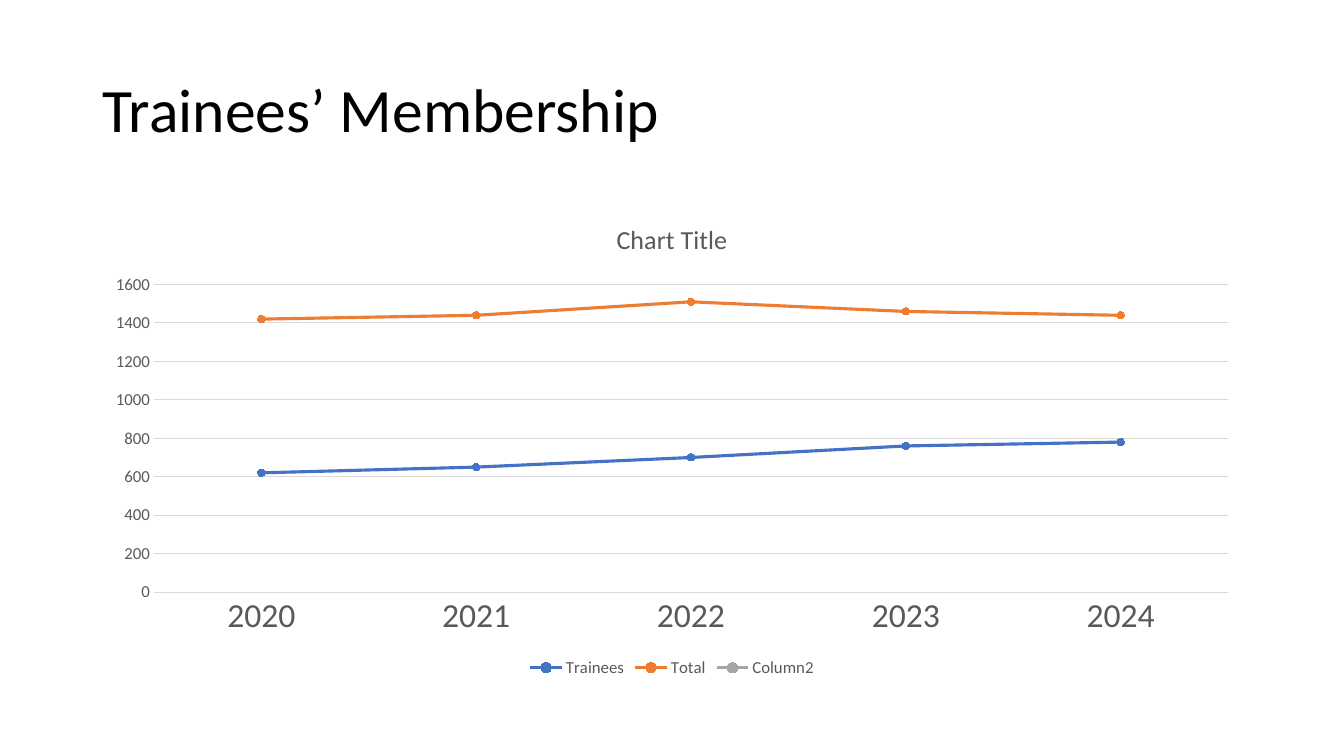
import dataclasses

import pptx
import pptx.chart.data
import pptx.dml.color
import pptx.enum.chart
import pptx.enum.text
import pptx.util

COLOURS = {
    "background": "FFFFFF",
    "heading": "000000",
    "label": "595959",
    "rule": "D9D9D9",
    "trainees": "4472C4",
    "total": "ED7D31",
    "column2": "A5A5A5",
}
FONT = "Calibri"
SLIDE_WIDTH = pptx.util.Inches(13.33)
SLIDE_HEIGHT = pptx.util.Inches(7.5)


@dataclasses.dataclass(frozen=True)
class Area:
    """A region given as shares of the slide's width and height."""
    left: float
    top: float
    width: float
    height: float

    def box(self) -> tuple[int, int, int, int]:
        return (round(self.left * SLIDE_WIDTH), round(self.top * SLIDE_HEIGHT),
                round(self.width * SLIDE_WIDTH), round(self.height * SLIDE_HEIGHT))


@dataclasses.dataclass(frozen=True)
class Membership:
    name: str
    counts: tuple[int | None, ...]
    colour: str


MARGIN = 0.069
HEADING_AREA = Area(MARGIN, 0.053, 1 - 2 * MARGIN, 0.193)
CHART_AREA = Area(MARGIN, 0.267, 1 - 2 * MARGIN, 0.635)

YEARS = [str(year) for year in range(2020, 2025)]
MEMBERSHIPS = [
    Membership("Trainees", (620, 650, 700, 760, 780), "trainees"),
    Membership("Total", (1420, 1440, 1510, 1460, 1440), "total"),
    Membership("Column2", (None,) * len(YEARS), "column2"),
]


def rgb(colour: str) -> pptx.dml.color.RGBColor:
    return pptx.dml.color.RGBColor.from_string(COLOURS[colour])


def style_font(font, size: float, colour: str) -> None:
    font.name = FONT
    font.size = pptx.util.Pt(size)
    font.bold = False
    font.color.rgb = rgb(colour)


def style_line(line, colour: str, width: float) -> None:
    line.color.rgb = rgb(colour)
    line.width = pptx.util.Pt(width)


def write_text(frame, text: str, *, size: float, colour: str,
               align=None, spacing: float | None = None) -> None:
    paragraph = frame.paragraphs[0]
    paragraph.alignment = align
    paragraph.line_spacing = spacing
    run = paragraph.add_run()
    run.text = text
    style_font(run.font, size, colour)


def style_axis(axis, size: float) -> None:
    axis.major_tick_mark = pptx.enum.chart.XL_TICK_MARK.NONE
    axis.minor_tick_mark = pptx.enum.chart.XL_TICK_MARK.NONE
    style_font(axis.tick_labels.font, size, "label")


def style_series(series, colour: str) -> None:
    series.smooth = False
    style_line(series.format.line, colour, 2.25)
    marker = series.marker
    marker.style = pptx.enum.chart.XL_MARKER_STYLE.CIRCLE
    marker.size = 5
    marker.format.fill.solid()
    marker.format.fill.fore_color.rgb = rgb(colour)
    style_line(marker.format.line, colour, 0.75)


def add_heading(slide) -> None:
    heading = slide.shapes.title
    heading.left, heading.top, heading.width, heading.height = HEADING_AREA.box()
    frame = heading.text_frame
    frame.word_wrap = True
    frame.auto_size = pptx.enum.text.MSO_AUTO_SIZE.NONE
    frame.vertical_anchor = pptx.enum.text.MSO_ANCHOR.MIDDLE
    write_text(frame, "Trainees’ Membership", size=44, colour="heading",
               align=pptx.enum.text.PP_ALIGN.LEFT, spacing=0.9)


def add_membership_chart(slide) -> None:
    data = pptx.chart.data.CategoryChartData()
    data.categories = YEARS
    for membership in MEMBERSHIPS:
        data.add_series(membership.name, membership.counts)
    chart = slide.shapes.add_chart(
        pptx.enum.chart.XL_CHART_TYPE.LINE_MARKERS, *CHART_AREA.box(), data).chart
    style_font(chart.font, 10, "heading")

    # Chart title
    chart.has_title = True
    chart.chart_title.include_in_layout = False
    write_text(chart.chart_title.text_frame, "Chart Title", size=18.6, colour="label")

    # Axes
    style_axis(chart.category_axis, 24)
    style_line(chart.category_axis.format.line, "rule", 0.75)
    counts = chart.value_axis
    style_axis(counts, 12)
    counts.minimum_scale, counts.maximum_scale, counts.major_unit = 0, 1600, 200
    counts.format.line.fill.background()
    counts.has_major_gridlines = True
    style_line(counts.major_gridlines.format.line, "rule", 0.75)

    # Legend
    chart.has_legend = True
    chart.legend.position = pptx.enum.chart.XL_LEGEND_POSITION.BOTTOM
    chart.legend.include_in_layout = False
    style_font(chart.legend.font, 12, "label")

    # Series
    plot = chart.plots[0]
    plot.vary_by_categories = False
    for series, membership in zip(plot.series, MEMBERSHIPS):
        style_series(series, membership.colour)


def main() -> None:
    presentation = pptx.Presentation()
    presentation.slide_width = SLIDE_WIDTH
    presentation.slide_height = SLIDE_HEIGHT
    slide = presentation.slides.add_slide(
        presentation.slide_layouts.get_by_name("Title Only"))
    slide.background.fill.solid()
    slide.background.fill.fore_color.rgb = rgb("background")
    add_heading(slide)
    add_membership_chart(slide)
    presentation.save("out.pptx")


if __name__ == "__main__":
    main()
